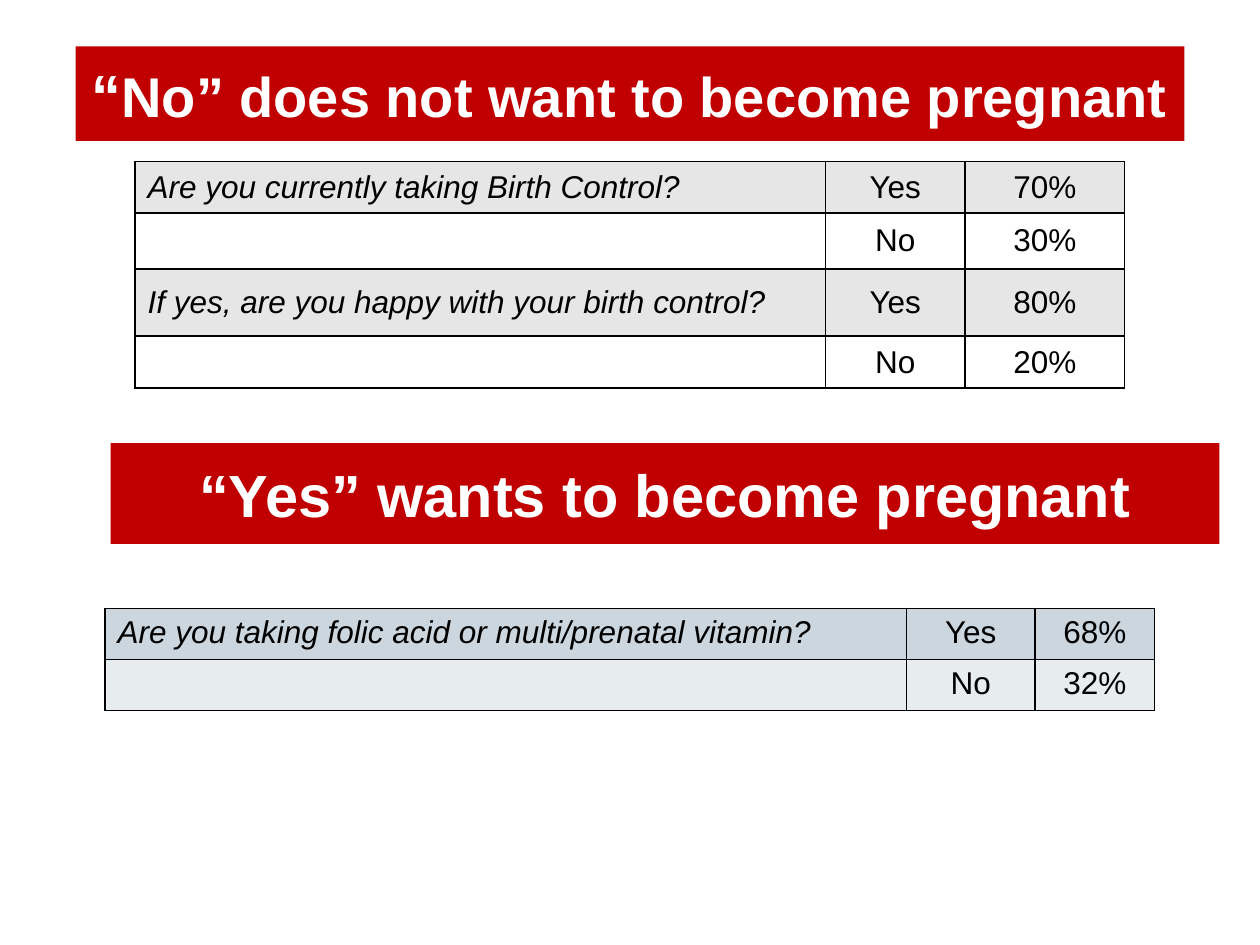
from lxml import etree
from pptx import Presentation
from pptx.dml.color import RGBColor
from pptx.enum.shapes import MSO_SHAPE as Shape
from pptx.enum.text import MSO_ANCHOR as Anchor, PP_ALIGN as Align
from pptx.oxml.ns import qn
from pptx.util import Pt

HUES = {
    "red": "C00000", "white": "FFFFFF", "black": "000000",
    "gray": "E6E6E6", "blue": "CBD6DF", "pale": "E7ECEF",
}


def color(name):
    return RGBColor.from_string(HUES[name])


def add_run(para, text, size, hue, bold=False, italic=False):
    run = para.add_run()
    run.text = text
    font = run.font
    font.name, font.size = "Arial", Pt(size)
    font.bold, font.italic = bold, italic
    font.color.rgb = color(hue)


def add_banner(slide, box, parts):
    """Draw a red heading bar; parts are pairs of text and size."""
    bar = slide.shapes.add_shape(Shape.RECTANGLE, *map(Pt, box))
    bar.shadow.inherit = False
    bar.fill.solid()
    bar.fill.fore_color.rgb = color("red")
    bar.line.fill.background()
    frame = bar.text_frame
    frame.word_wrap = True
    frame.vertical_anchor = Anchor.MIDDLE
    para = frame.paragraphs[0]
    para.alignment = Align.CENTER
    for text, size in parts:
        add_run(para, text, size, "white", bold=True)


def add_border(cell):
    props = cell._tc.get_or_add_tcPr()
    for at, side in enumerate(("a:lnL", "a:lnR", "a:lnT", "a:lnB")):
        line = etree.Element(qn(side), w=str(Pt(1)))
        fill = etree.SubElement(line, qn("a:solidFill"))
        etree.SubElement(fill, qn("a:srgbClr"), val=HUES["black"])
        props.insert(at, line)


def add_grid(slide, left, top, widths, heights, rows, bands, anchor):
    """Draw a table of question, answer and share, with two row fills."""
    frame = slide.shapes.add_table(
        len(rows), len(widths), Pt(left), Pt(top),
        Pt(sum(widths)), Pt(sum(heights)))
    table = frame.table
    for col, width in zip(table.columns, widths):
        col.width = Pt(width)
    for r, (height, row) in enumerate(zip(heights, rows)):
        table.rows[r].height = Pt(height)
        for c, text in enumerate(row):
            cell = table.cell(r, c)
            cell.fill.solid()
            cell.fill.fore_color.rgb = color(bands[r % 2])
            cell.vertical_anchor = anchor
            add_border(cell)
            if text:
                para = cell.text_frame.paragraphs[0]
                para.alignment = Align.CENTER if c else Align.LEFT
                add_run(para, text, 18, "black", italic=c == 0)


def main():
    deck = Presentation()
    deck.slide_width, deck.slide_height = Pt(720), Pt(540)
    slide = deck.slides.add_slide(deck.slide_layouts[6])

    add_banner(slide, (43.2, 26.5, 633.6, 54),
               [("“", 34), ("No” does not want to become pregnant", 32)])
    add_grid(slide, 77.2, 92.3, (394.4, 80, 91), (29.3, 32.2, 38.4, 29.6), [
        ("Are you currently taking Birth Control?", "Yes", "70%"),
        ("", "No", "30%"),
        ("If yes, are you happy with your birth control?", "Yes", "80%"),
        ("", "No", "20%"),
    ], ("gray", "white"), Anchor.MIDDLE)

    add_banner(slide, (63.2, 253.2, 633.6, 57.6),
               [("“Yes” wants to become pregnant", 34)])
    add_grid(slide, 60, 347.7, (458, 73.5, 68.3), (29.2, 29.2), [
        ("Are you taking folic acid or multi/prenatal vitamin?",
         "Yes", "68%"),
        ("", "No", "32%"),
    ], ("blue", "pale"), Anchor.TOP)

    deck.save("out.pptx")


if __name__ == "__main__":
    main()
